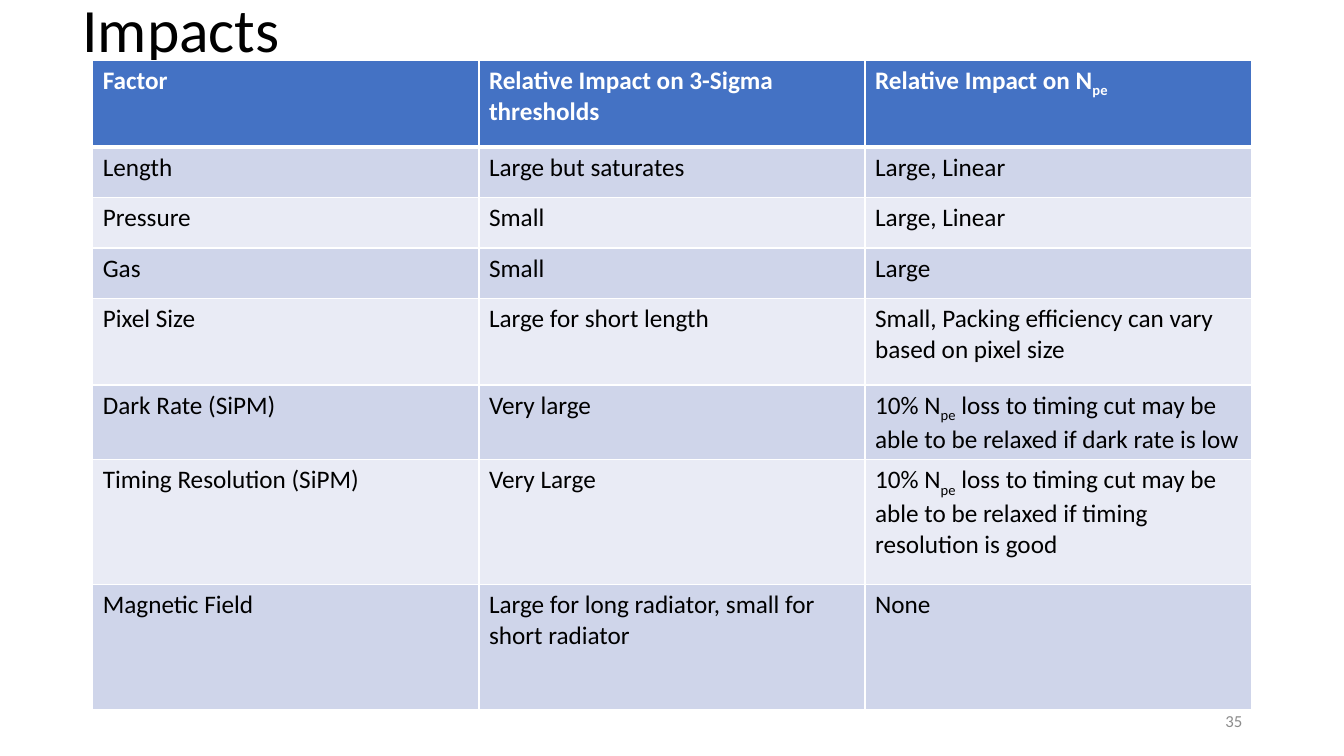
from lxml import etree
from pptx import Presentation
from pptx.dml.color import RGBColor
from pptx.enum.text import MSO_ANCHOR, PP_ALIGN
from pptx.oxml.ns import qn
from pptx.util import Emu, Pt

MIDDLE = MSO_ANCHOR.MIDDLE
LEFT, RIGHT = PP_ALIGN.LEFT, PP_ALIGN.RIGHT

EMU_PER_PX = 9144  # 100 px to the inch
FONT = "Calibri"
COLORS = {
    "text": "000000",
    "header_text": "FFFFFF",
    "header": "4472C4",
    "odd_row": "CFD5EA",
    "even_row": "E9EBF5",
    "border": "FFFFFF",
    "page_number": "8C8C8C",
}

COLUMN_WIDTH = 383
ROW_HEIGHTS = [86, 50, 50, 50, 86, 65, 124, 124]
# Text between underscores is set as subscript
IMPACTS = [
    ["Factor", "Relative Impact on 3-Sigma thresholds", "Relative Impact on N_pe_"],
    ["Length", "Large but saturates", "Large, Linear"],
    ["Pressure", "Small", "Large, Linear"],
    ["Gas", "Small", "Large"],
    ["Pixel Size", "Large for short length",
     "Small, Packing efficiency can vary based on pixel size"],
    ["Dark Rate (SiPM)", "Very large",
     "10% N_pe_ loss to timing cut may be able to be relaxed if dark rate is low"],
    ["Timing Resolution (SiPM)", "Very Large",
     "10% N_pe_ loss to timing cut may be able to be relaxed if timing resolution is good"],
    ["Magnetic Field", "Large for long radiator, small for short radiator", "None"],
]


def px(length):
    return Emu(length * EMU_PER_PX)


def rgb(name):
    return RGBColor.from_string(COLORS[name])


def add_runs(paragraph, text, size, color, bold=False):
    for index, part in enumerate(text.split("_")):
        if not part:
            continue
        run = paragraph.add_run()
        run.text = part
        run.font.name = FONT
        run.font.size = Pt(size)
        run.font.bold = bold
        run.font.color.rgb = rgb(color)
        if index % 2:
            run.font._element.set("baseline", "-25000")


def add_label(slide, box, text, size, color, align=LEFT, line_spacing=1.0):
    frame = slide.shapes.add_textbox(*map(px, box)).text_frame
    frame.word_wrap = True
    frame.vertical_anchor = MIDDLE
    paragraph = frame.paragraphs[0]
    paragraph.alignment = align
    paragraph.line_spacing = line_spacing
    add_runs(paragraph, text, size, color)


def add_borders(cell, top, bottom):
    properties = cell._tc.get_or_add_tcPr()
    for side, width in (("lnL", 1), ("lnR", 1), ("lnT", top), ("lnB", bottom)):
        line = etree.SubElement(properties, qn(f"a:{side}"), w=str(Pt(width)))
        fill = etree.SubElement(line, qn("a:solidFill"))
        etree.SubElement(fill, qn("a:srgbClr"), val=COLORS["border"])


def fill_cell(cell, text, row):
    is_header = row == 0
    # The rule under the header is thicker than the others
    add_borders(cell, top=3 if row == 1 else 1, bottom=3 if is_header else 1)
    cell.fill.solid()
    band = "odd_row" if row % 2 else "even_row"
    cell.fill.fore_color.rgb = rgb("header" if is_header else band)
    color = "header_text" if is_header else "text"
    add_runs(cell.text_frame.paragraphs[0], text, 18, color, bold=is_header)


def add_impact_table(slide, left, top):
    columns = len(IMPACTS[0])
    table = slide.shapes.add_table(
        len(IMPACTS), columns, px(left), px(top),
        px(COLUMN_WIDTH * columns), px(sum(ROW_HEIGHTS))).table
    for column in table.columns:
        column.width = px(COLUMN_WIDTH)
    for row, (height, texts) in enumerate(zip(ROW_HEIGHTS, IMPACTS)):
        table.rows[row].height = px(height)
        for column, text in enumerate(texts):
            fill_cell(table.cell(row, column), text, row)


def main():
    presentation = Presentation()
    presentation.slide_width = px(1333)
    presentation.slide_height = px(750)
    slide = presentation.slides.add_slide(presentation.slide_layouts[6])

    # Title
    add_label(slide, (72, -40, 1150, 145), "Impacts", 44, "text", line_spacing=0.9)
    # Factors and their impacts
    add_impact_table(slide, 92, 60)
    # Page number
    add_label(slide, (942, 695, 300, 40), "35", 12, "page_number", align=RIGHT)

    presentation.save("out.pptx")


if __name__ == "__main__":
    main()
